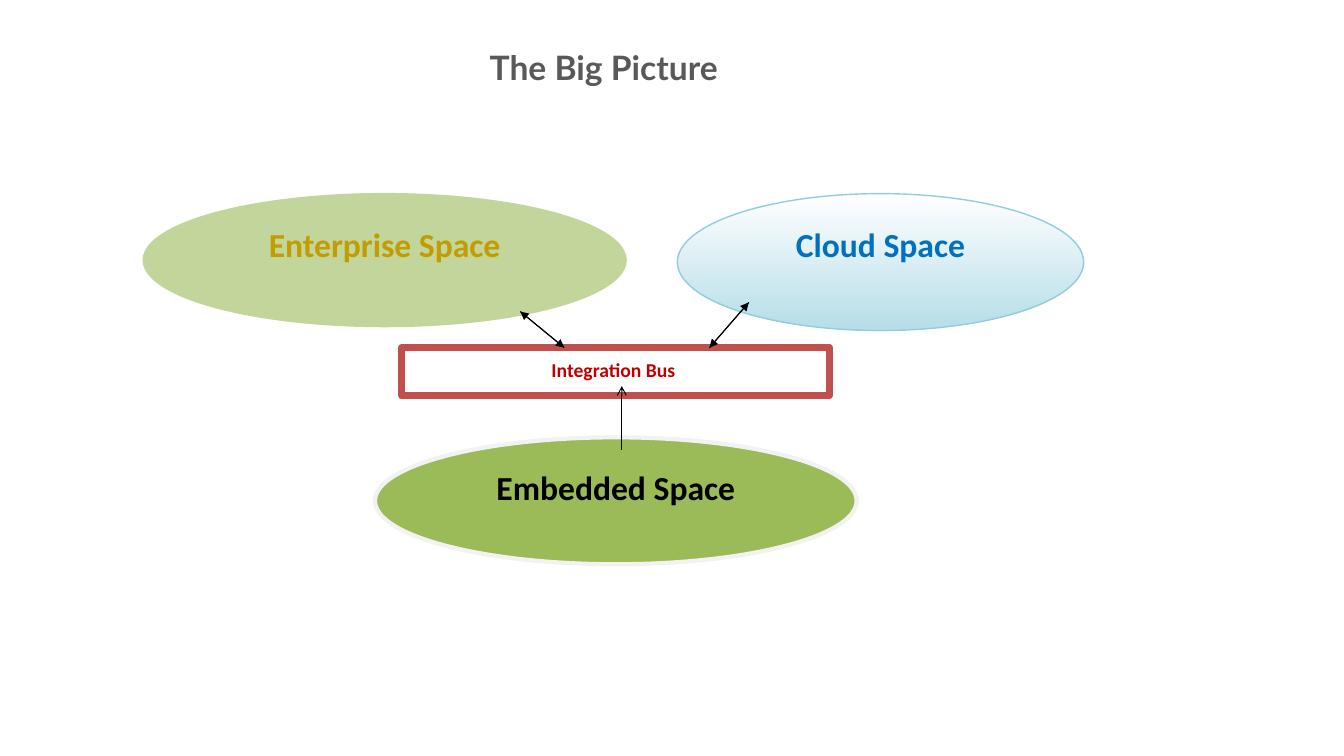
from dataclasses import dataclass

import lxml.etree
import pptx
import pptx.dml.color
import pptx.enum.shapes
import pptx.enum.text
import pptx.oxml.ns
import pptx.util

Cm = pptx.util.Cm
Pt = pptx.util.Pt
RGBColor = pptx.dml.color.RGBColor
Preset = pptx.enum.shapes.MSO_SHAPE
qn = pptx.oxml.ns.qn

BLACK = RGBColor(0x00, 0x00, 0x00)
WHITE = RGBColor(0xFF, 0xFF, 0xFF)
TITLE_GREY = RGBColor(0x59, 0x59, 0x59)
PALE_GREY = RGBColor(0xF2, 0xF2, 0xF2)
PALE_GREEN = RGBColor(0xC2, 0xD6, 0x9B)
GREEN = RGBColor(0x9B, 0xBB, 0x59)
GOLD = RGBColor(0xC3, 0x9C, 0x01)
PALE_BLUE = RGBColor(0xB6, 0xDD, 0xE8)
SKY_BLUE = RGBColor(0x92, 0xCD, 0xDC)
BLUE = RGBColor(0x00, 0x70, 0xC0)
BRICK = RGBColor(0xC0, 0x50, 0x4D)
RED = RGBColor(0xC0, 0x00, 0x00)


@dataclass
class Space:
    label: str
    box: tuple[float, float, float, float]
    fills: tuple[RGBColor, ...]
    outline: RGBColor
    outline_pt: float
    ink: RGBColor
    size_pt: int = 24
    preset: Preset = Preset.OVAL


@dataclass
class Arrow:
    start: tuple[float, float]
    end: tuple[float, float]
    head: str = "triangle"

    def reversed(self) -> "Arrow":
        return Arrow(self.end, self.start, self.head)


SPACES = [
    Space("Enterprise Space", (3.61, 4.88, 12.17, 3.35), (PALE_GREEN,), PALE_GREEN, 1, GOLD),
    Space("Embedded Space", (9.45, 11.02, 12.14, 3.2), (GREEN,), PALE_GREY, 3, BLACK),
    Space("Cloud Space", (17.07, 4.88, 10.24, 3.45), (WHITE, PALE_BLUE), SKY_BLUE, 1, BLUE),
    Space("Integration Bus ", (10.13, 8.76, 10.77, 1.22), (WHITE,), BRICK, 5, RED, 14,
          Preset.RECTANGLE),
]
CLOUD_LINK = Arrow((17.88, 8.76), (18.87, 7.62))
ENTERPRISE_LINK = Arrow((14.22, 8.76), (13.11, 7.85))
EMBEDDED_LINK = Arrow((15.67, 11.33), (15.67, 9.73), "arrow")
ARROWS = [CLOUD_LINK, ENTERPRISE_LINK, ENTERPRISE_LINK.reversed(),
          CLOUD_LINK.reversed(), EMBEDDED_LINK]


def write_label(frame, label: str, font_name: str, size_pt: int, ink: RGBColor,
                top_inset: float):
    """Write one bold centred line at the top of the frame; return its paragraph."""
    frame.word_wrap = True
    frame.auto_size = pptx.enum.text.MSO_AUTO_SIZE.NONE
    frame.vertical_anchor = pptx.enum.text.MSO_ANCHOR.TOP
    frame.margin_left = frame.margin_right = Cm(0.25)
    frame.margin_top, frame.margin_bottom = Cm(top_inset), Cm(0.13)
    paragraph = frame.paragraphs[0]
    paragraph.alignment = pptx.enum.text.PP_ALIGN.CENTER
    run = paragraph.add_run()
    run.text = label
    run.font.name = font_name
    run.font.size = Pt(size_pt)
    run.font.bold = True
    run.font.color.rgb = ink
    return paragraph


def add_title(slide) -> None:
    title = slide.shapes.title
    title.left, title.top, title.width, title.height = map(Cm, (7.62, 0.84, 15.19, 1.55))
    write_label(title.text_frame, "The Big Picture", "Lato", 24, TITLE_GREY, 0.33)


def add_space(slide, space: Space) -> None:
    outline = slide.shapes.add_shape(space.preset, *map(Cm, space.box))
    outline.shadow.inherit = False
    if len(space.fills) == 1:
        outline.fill.solid()
        outline.fill.fore_color.rgb = space.fills[0]
    else:
        outline.fill.gradient()
        outline.fill.gradient_angle = 270
        for stop, color in zip(outline.fill.gradient_stops, space.fills):
            stop.color.rgb = color
    outline.line.color.rgb = space.outline
    outline.line.width = Pt(space.outline_pt)
    paragraph = write_label(outline.text_frame, space.label, "Calibri",
                            space.size_pt, space.ink, 0.25)
    paragraph.line_spacing = 1.02
    paragraph.space_after = Pt(10)


def add_arrow(slide, arrow: Arrow) -> None:
    connector = slide.shapes.add_connector(
        pptx.enum.shapes.MSO_CONNECTOR.STRAIGHT, *map(Cm, arrow.start + arrow.end))
    connector.line.color.rgb = BLACK
    connector.line.width = Pt(0.75)
    properties = connector.element.spPr
    lxml.etree.SubElement(properties.find(qn("a:ln")), qn("a:tailEnd"), type=arrow.head)
    lxml.etree.SubElement(properties, qn("a:effectLst"))


def main() -> None:
    presentation = pptx.Presentation()
    presentation.slide_width, presentation.slide_height = Cm(33.87), Cm(19.05)
    slide = presentation.slides.add_slide(presentation.slide_layouts[5])
    add_title(slide)
    for space in SPACES:
        add_space(slide, space)
    for arrow in ARROWS:
        add_arrow(slide, arrow)
    presentation.save("out.pptx")


if __name__ == "__main__":
    main()
